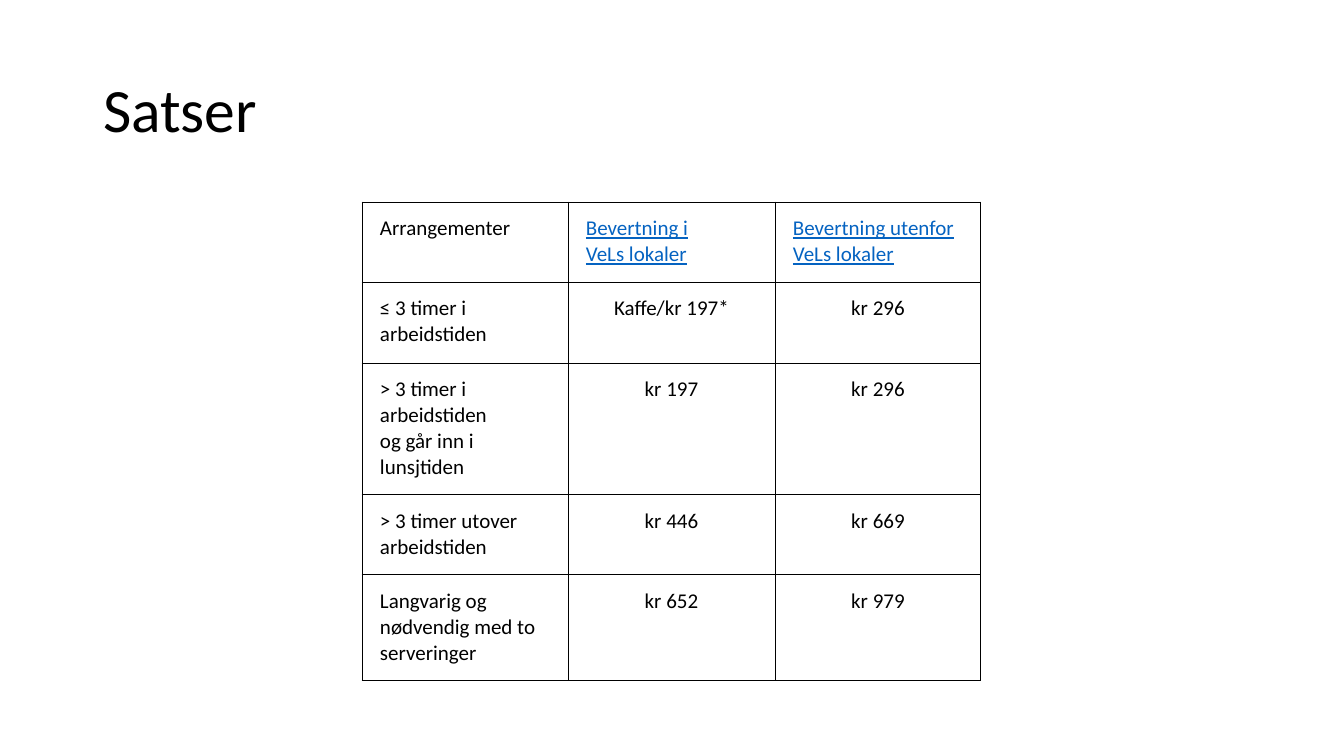
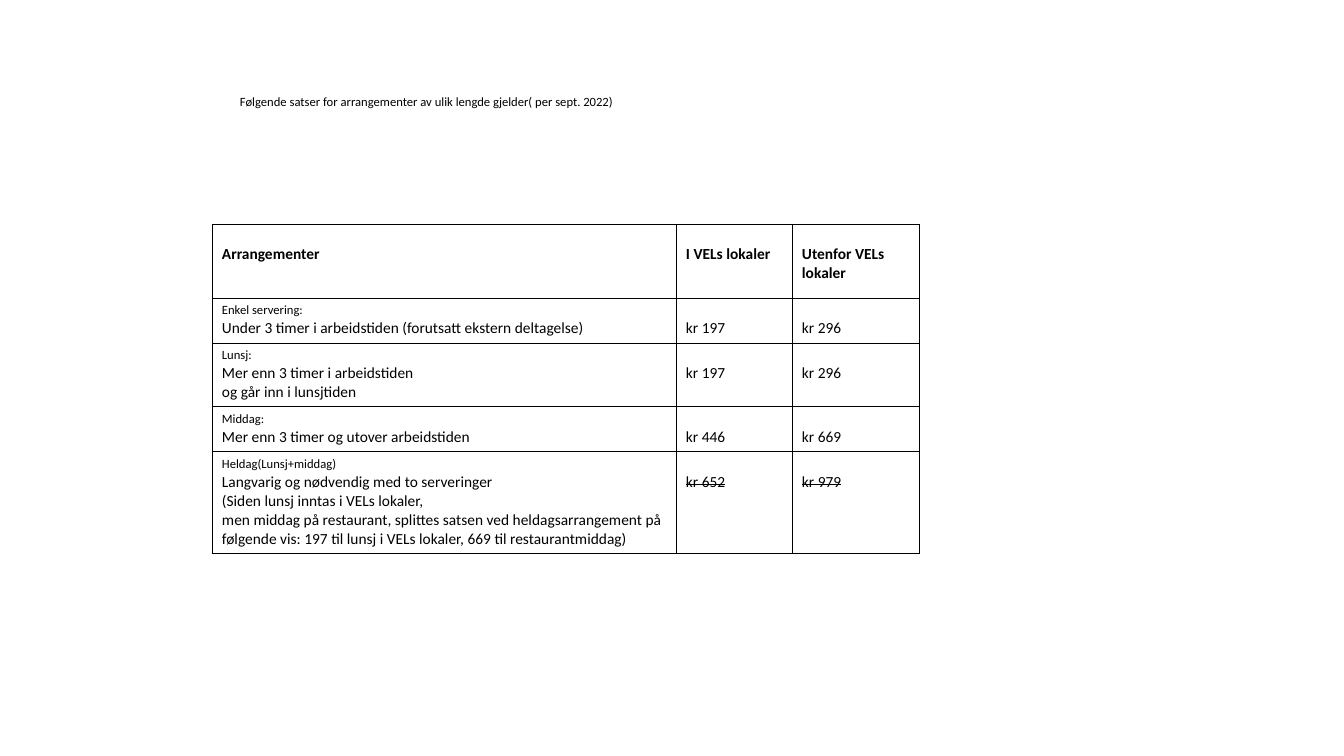
from dataclasses import dataclass

from lxml import etree
from pptx import Presentation
from pptx.dml.color import RGBColor
from pptx.enum.text import MSO_ANCHOR, MSO_AUTO_SIZE, PP_ALIGN
from pptx.oxml.ns import qn
from pptx.util import Emu, Pt

LEFT, CENTER = PP_ALIGN.LEFT, PP_ALIGN.CENTER
TOP, MIDDLE = MSO_ANCHOR.TOP, MSO_ANCHOR.MIDDLE
FIXED = MSO_AUTO_SIZE.NONE
SCALE = 914400 / 100.8
SIDES = ("a:lnL", "a:lnR", "a:lnT", "a:lnB")
TITLE_ONLY, BLANK = 5, 6


@dataclass(frozen=True)
class Theme:
    font: str = "Calibri"
    ink: str = "000000"
    link: str = "0563C1"
    title: int = 44
    large: int = 15
    body: int = 11
    small: int = 9
    rule: float = 0.75


THEME = Theme()


def px(count):
    return Emu(round(count * SCALE))


def write(frame, lines, size, first=None, color=THEME.ink, bold=False,
          under=False, strike=False, align=LEFT, space=1.0):
    frame.word_wrap = True
    for index, line in enumerate(lines.split("\n")):
        para = frame.add_paragraph() if index else frame.paragraphs[0]
        para.alignment = align
        para.line_spacing = space
        run = para.add_run()
        run.text = line
        font = run.font
        font.name = THEME.font
        font.size = Pt(first if first and index == 0 else size)
        font.bold = bold
        font.underline = under
        font.color.rgb = RGBColor.from_string(color)
        if strike:
            run._r.get_or_add_rPr().set("strike", "sngStrike")


class Deck:
    def __init__(self, theme):
        self.theme = theme
        self.file = Presentation()
        self.file.slide_width = px(1344)
        self.file.slide_height = px(756)
        self.slide = None

    def add(self, layout):
        self.slide = self.file.slides.add_slide(self.file.slide_layouts[layout])

    def title(self, words):
        shape = self.slide.shapes.title
        shape.left, shape.top, shape.width, shape.height = map(px, (93, 40, 1159, 146))
        frame = shape.text_frame
        frame.auto_size = FIXED
        frame.vertical_anchor = MIDDLE
        write(frame, words, self.theme.title, space=0.9)

    def label(self, words, box):
        shape = self.slide.shapes.add_textbox(*map(px, box))
        write(shape.text_frame, words, self.theme.small)

    def border(self, cell):
        props = cell._tc.get_or_add_tcPr()
        for side in SIDES:
            line = etree.SubElement(props, qn(side), w=str(Pt(self.theme.rule)))
            fill = etree.SubElement(line, qn("a:solidFill"))
            etree.SubElement(fill, qn("a:srgbClr"), val=self.theme.ink)

    def table(self, left, top, cols, rows, data, style):
        frame = self.slide.shapes.add_table(
            len(rows), len(cols), px(left), px(top), px(sum(cols)), px(sum(rows)))
        table = frame.table
        table.first_row = table.horz_banding = False
        for col, width in zip(table.columns, cols):
            col.width = px(width)
        for row, height in zip(table.rows, rows):
            row.height = px(height)
        for r, items in enumerate(data):
            for c, words in enumerate(items):
                cell = table.cell(r, c)
                self.border(cell)
                cell.fill.background()
                cell.vertical_anchor = TOP
                pad, form = style(r, c)
                sides = map(px, pad)
                cell.margin_left, cell.margin_top, cell.margin_right, cell.margin_bottom = sides
                write(cell.text_frame, words, **form)


def rate_style(row, col):
    form = {"size": THEME.large}
    if col and row:
        form["align"] = CENTER
    elif col:
        form.update(color=THEME.link, under=True)
    return (18, 14, 18, 14), form


def meal_style(row, col):
    form = {"size": THEME.body, "bold": row == 0}
    tall = row == 0 or col > 0
    if not tall:
        form["first"] = THEME.small
    form["strike"] = row == 4 and col > 0
    return (10, 21 if tall else 5, 10, 5), form


RATES = (
    ("Arrangementer", "Bevertning i\nVeLs lokaler", "Bevertning utenfor\nVeLs lokaler"),
    ("≤ 3 timer i arbeidstiden", "Kaffe/kr 197*", "kr 296"),
    ("> 3 timer i arbeidstiden\nog går inn i lunsjtiden", "kr 197", "kr 296"),
    ("> 3 timer utover arbeidstiden", "kr 446", "kr 669"),
    ("Langvarig og nødvendig med to serveringer", "kr 652", "kr 979"),
)
MEALS = (
    ("Arrangementer", "I VELs lokaler", "Utenfor VELs lokaler"),
    ("Enkel servering:\nUnder 3 timer i arbeidstiden (forutsatt ekstern deltagelse)",
     "kr 197", "kr 296"),
    ("Lunsj:\nMer enn 3 timer i arbeidstiden\nog går inn i lunsjtiden", "kr 197", "kr 296"),
    ("Middag:\nMer enn 3 timer og utover arbeidstiden", "kr 446", "kr 669"),
    ("Heldag(Lunsj+middag)\nLangvarig og nødvendig med to serveringer\n"
     "(Siden lunsj inntas i VELs lokaler,\n"
     "men middag på restaurant, splittes satsen ved heldagsarrangement på\n"
     "følgende vis: 197 til lunsj i VELs lokaler, 669 til restaurantmiddag)",
     "kr 652", "kr 979"),
)


def main():
    deck = Deck(THEME)
    deck.add(TITLE_ONLY)
    deck.title("Satser")
    deck.table(362, 202, (206, 207, 206), (80, 81, 132, 80, 106), RATES, rate_style)
    deck.add(BLANK)
    deck.table(212, 224, (464, 116, 127), (74, 44, 64, 44, 102), MEALS, meal_style)
    deck.label("Følgende satser for arrangementer av ulik lengde gjelder( per sept. 2022)",
               (230, 89, 672, 72))
    deck.file.save("out.pptx")


if __name__ == "__main__":
    main()
